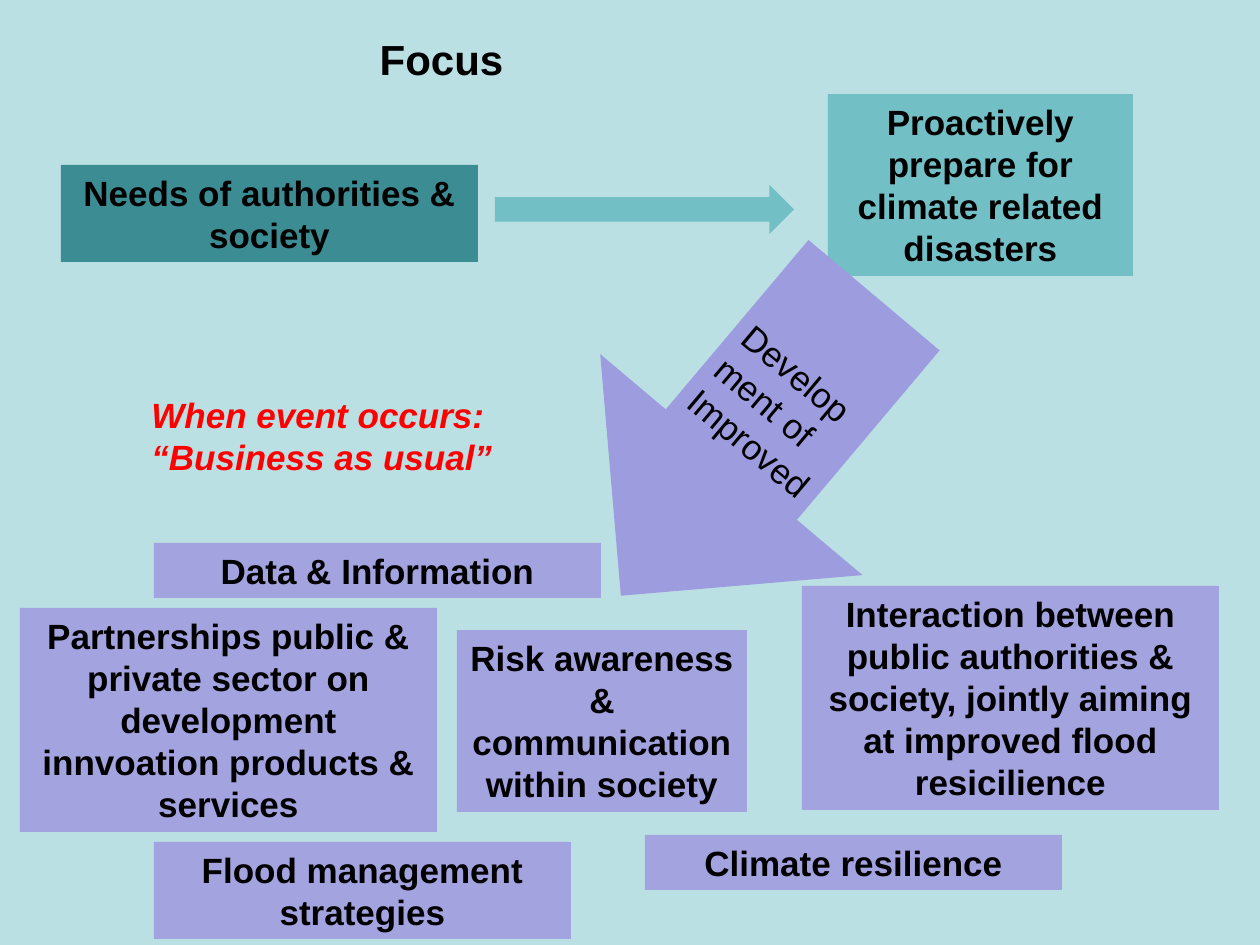
import pptx
import pptx.dml.color
import pptx.enum.shapes
import pptx.enum.text
import pptx.util

EMU_PER_PX = 914400 // 126
COLORS = {
    "background": "BBE0E3",
    "goal": "72BFC5",
    "needs": "3C8C93",
    "outcome": "A3A3E0",
    "development": "9C9CDF",
    "text": "000000",
    "event": "FF0000",
}
BOXES = [
    ("Proactively prepare for climate related disasters", "goal", (828, 94, 305, 182)),
    ("Needs of authorities & society", "needs", (61, 165, 417, 97)),
    ("Flood management strategies", "outcome", (154, 842, 417, 97)),
    ("Climate resilience", "outcome", (645, 835, 417, 55)),
    ("Interaction between public authorities & society, jointly aiming at improved flood resicilience",
     "outcome", (802, 586, 417, 224)),
    ("Partnerships public & private sector on development innvoation products & services",
     "outcome", (20, 608, 417, 224)),
    ("Data & Information", "outcome", (154, 543, 447, 55)),
    ("Risk awareness & communication within society", "outcome", (457, 630, 290, 182)),
]


def px(value):
    """Turn pixels into EMU."""
    return pptx.util.Emu(value * EMU_PER_PX)


def color(name):
    """Look up a named colour."""
    return pptx.dml.color.RGBColor.from_string(COLORS[name])


def write(shape, text, size=20, color_name="text", bold=True, italic=False, centered=True):
    """Write and format wrapped text from the top of a shape."""
    frame = shape.text_frame
    frame.text = text
    frame.word_wrap = True
    frame.vertical_anchor = pptx.enum.text.MSO_ANCHOR.TOP
    alignment = pptx.enum.text.PP_ALIGN
    for paragraph in frame.paragraphs:
        paragraph.alignment = alignment.CENTER if centered else alignment.LEFT
        for run in paragraph.runs:
            run.font.name = "Arial"
            run.font.size = pptx.util.Pt(size)
            run.font.bold = bold
            run.font.italic = italic
            run.font.color.rgb = color(color_name)


def add_filled(slide, kind, fill, place):
    """Add a filled preset shape without outline or shadow."""
    shape = slide.shapes.add_shape(kind, *map(px, place))
    shape.shadow.inherit = False
    shape.fill.solid()
    shape.fill.fore_color.rgb = color(fill)
    shape.line.fill.background()
    return shape


def add_box(slide, text, fill, place):
    """Add a labelled rectangle."""
    write(add_filled(slide, pptx.enum.shapes.MSO_SHAPE.RECTANGLE, fill, place), text)


def add_label(slide, text, place, **style):
    """Add a free-standing text box."""
    write(slide.shapes.add_textbox(*map(px, place)), text, **style)


def add_development_arrow(slide):
    """Add the tilted arrow leading to the outcomes."""
    arrow = add_filled(slide, pptx.enum.shapes.MSO_SHAPE.DOWN_ARROW, "development", (576, 249, 343, 393))
    arrow.rotation = 40.1
    write(arrow, "Development of Improved", bold=False, centered=False)
    arrow.text_frame.margin_top = px(88)


def main():
    """Build and save the slide."""
    presentation = pptx.Presentation()
    presentation.slide_width = pptx.util.Inches(10)
    presentation.slide_height = pptx.util.Inches(7.5)
    slide = presentation.slides.add_slide(presentation.slide_layouts[6])
    slide.background.fill.solid()
    slide.background.fill.fore_color.rgb = color("background")
    for text, fill, place in BOXES:
        add_box(slide, text, fill, place)
    add_filled(slide, pptx.enum.shapes.MSO_SHAPE.RIGHT_ARROW, "goal", (495, 185, 299, 49))
    add_development_arrow(slide)
    add_label(slide, "Focus", (184, 27, 515, 63), size=24)
    add_label(slide, "When event occurs:\n“Business as usual”", (139, 387, 446, 97),
              color_name="event", italic=True, centered=False)
    presentation.save("out.pptx")


if __name__ == "__main__":
    main()
